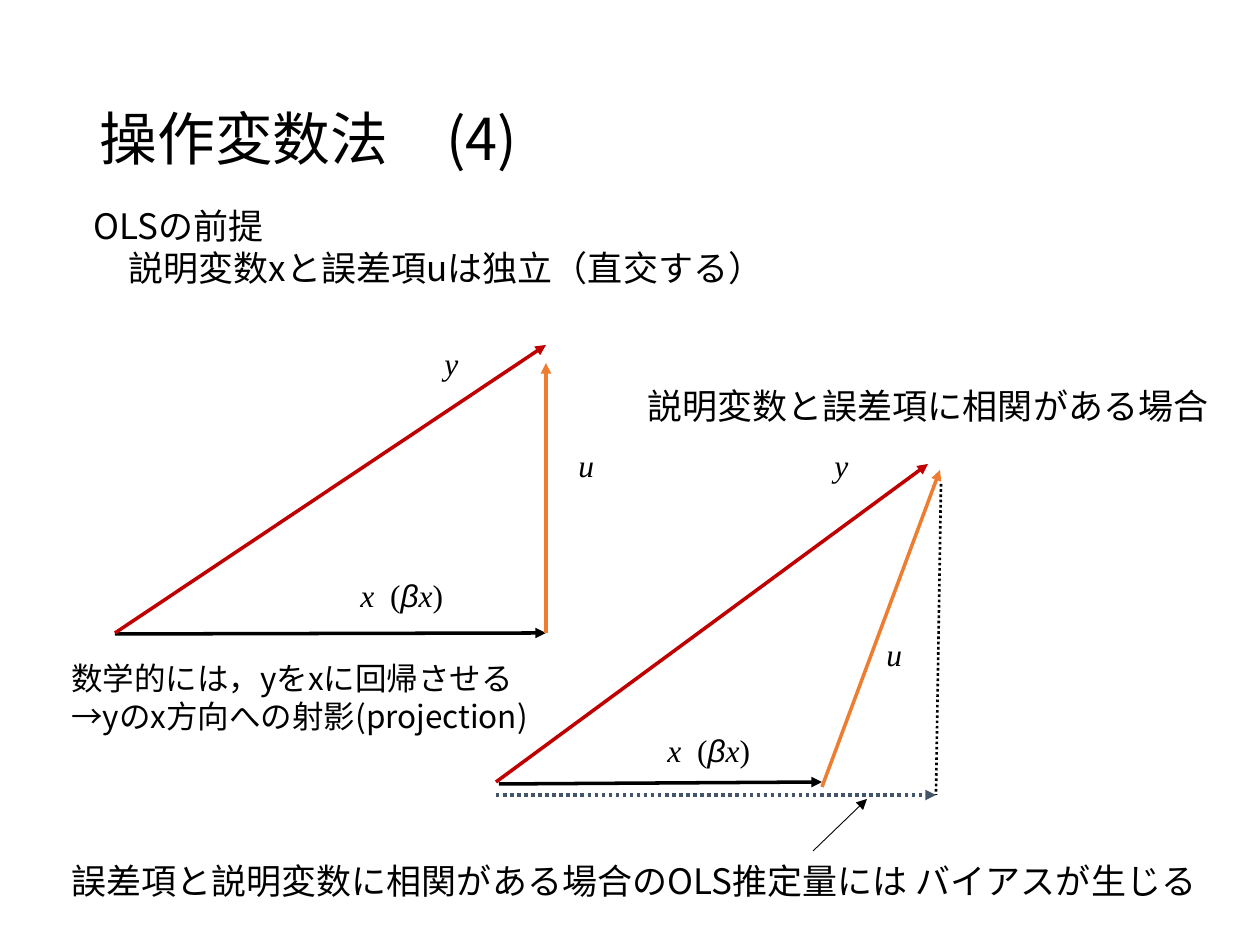
from lxml.etree import SubElement
from pptx import Presentation
from pptx.dml.color import RGBColor
from pptx.enum.dml import MSO_LINE
from pptx.enum.shapes import MSO_CONNECTOR
from pptx.enum.text import MSO_ANCHOR as Anchor, MSO_AUTO_SIZE as AutoSize, PP_ALIGN as Align
from pptx.oxml.ns import qn
from pptx.util import Emu, Pt

EMU_PER_PX = 914400 / 126
JAPANESE, SERIF, SANS = "Noto Sans CJK JP", "Times New Roman", "Arial"
BLACK, RED, ORANGE, SLATE = "000000", "C00000", "ED7D31", "44546A"
BETA_X = [("x  ", SERIF, True), ("(", SERIF, False), ("β", SANS, True),
          ("x", SERIF, True), (")", SERIF, False)]


def px(*lengths):
    return [Emu(round(length * EMU_PER_PX)) for length in lengths]


def color(hex_string):
    return RGBColor.from_string(hex_string)


class SlideBuilder:
    def __init__(self, slide):
        self.slide = slide

    def format_run(self, run, size, font=JAPANESE, italic=False):
        run.font.size = Pt(size)
        run.font.name = font
        run.font.italic = italic
        run.font.color.rgb = color(BLACK)
        if font == JAPANESE:
            east_asian = SubElement(run.font._element, qn("a:ea"))
            east_asian.set("typeface", font)

    def title(self, text, box):
        shape = self.slide.shapes.title
        shape.left, shape.top, shape.width, shape.height = px(*box)
        frame = shape.text_frame
        frame.text = text
        frame.auto_size = AutoSize.NONE
        frame.vertical_anchor = Anchor.MIDDLE
        paragraph = frame.paragraphs[0]
        paragraph.alignment = Align.LEFT
        paragraph.line_spacing = 0.9
        self.format_run(paragraph.runs[0], 33)

    def text_box(self, box, wrap=True):
        frame = self.slide.shapes.add_textbox(*px(*box)).text_frame
        frame.word_wrap = wrap
        frame.auto_size = AutoSize.SHAPE_TO_FIT_TEXT
        return frame

    def note(self, text, box, size=20):
        frame = self.text_box(box)
        frame.text = text
        for paragraph in frame.paragraphs:
            for run in paragraph.runs:
                self.format_run(run, size)

    def label(self, pieces, box, wrap=True):
        paragraph = self.text_box(box, wrap).paragraphs[0]
        for text, font, italic in pieces:
            run = paragraph.add_run()
            run.text = text
            self.format_run(run, 18, font, italic)

    def line(self, start, end, hex_string, width=2, dotted=False, arrow=True):
        connector = self.slide.shapes.add_connector(
            MSO_CONNECTOR.STRAIGHT, *px(*start, *end))
        connector.line.color.rgb = color(hex_string)
        connector.line.width = Pt(width)
        if dotted:
            connector.line.dash_style = MSO_LINE.ROUND_DOT
        if arrow:
            SubElement(connector.line._get_or_add_ln(), qn("a:tailEnd")).set("type", "triangle")
        SubElement(connector._element.spPr, qn("a:effectLst"))
        return connector


def main():
    presentation = Presentation()
    presentation.slide_width, presentation.slide_height = px(1260, 945)
    slide = presentation.slides.add_slide(presentation.slide_layouts[5])
    builder = SlideBuilder(slide)
    y_label, u_label = [("y", SERIF, True)], [("u", SERIF, True)]

    builder.title("操作変数法\u3000(4)".replace("\u3000", "　"), (87, 50, 1086, 183))

    # Left triangle: x and u are orthogonal
    slide.shapes.add_group_shape([
        builder.line((115, 634), (546, 633), BLACK),
        builder.line((115, 633), (546, 345), RED),
        builder.line((546, 633), (546, 363), ORANGE),
    ])
    builder.label(y_label, (432, 338, 39, 50), wrap=False)
    builder.label(BETA_X, (348, 570, 108, 50), wrap=False)
    builder.label(u_label, (566, 440, 39, 50))
    builder.note("OLSの前提\n　説明変数xと誤差項uは独立（直交する）", (81, 198, 709, 136))

    # Right triangle: x and u are correlated
    builder.line((499, 784), (822, 782), BLACK)
    builder.line((496, 782), (928, 464), RED)
    builder.line((822, 787), (940, 470), ORANGE)
    builder.label(y_label, (822, 440, 45, 50))
    builder.label(u_label, (874, 629, 47, 50))
    builder.label(BETA_X, (655, 725, 108, 50), wrap=False)

    # Projection of y and the pointer to the bias
    builder.line((941, 484), (936, 795), BLACK, width=1.5, dotted=True, arrow=False)
    builder.line((496, 795), (936, 795), SLATE, dotted=True)
    builder.line((813, 851), (867, 799), BLACK, width=0.5)

    # Explanations
    builder.note("誤差項と説明変数に相関がある場合のOLS推定量には バイアスが生じる", (59, 853, 1166, 55))
    builder.note("説明変数と誤差項に相関がある場合", (635, 378, 586, 55))
    builder.note("数学的には，yをxに回帰させる→yのx方向への射影(projection)", (59, 653, 485, 89), size=18)

    presentation.save("out.pptx")


if __name__ == "__main__":
    main()
